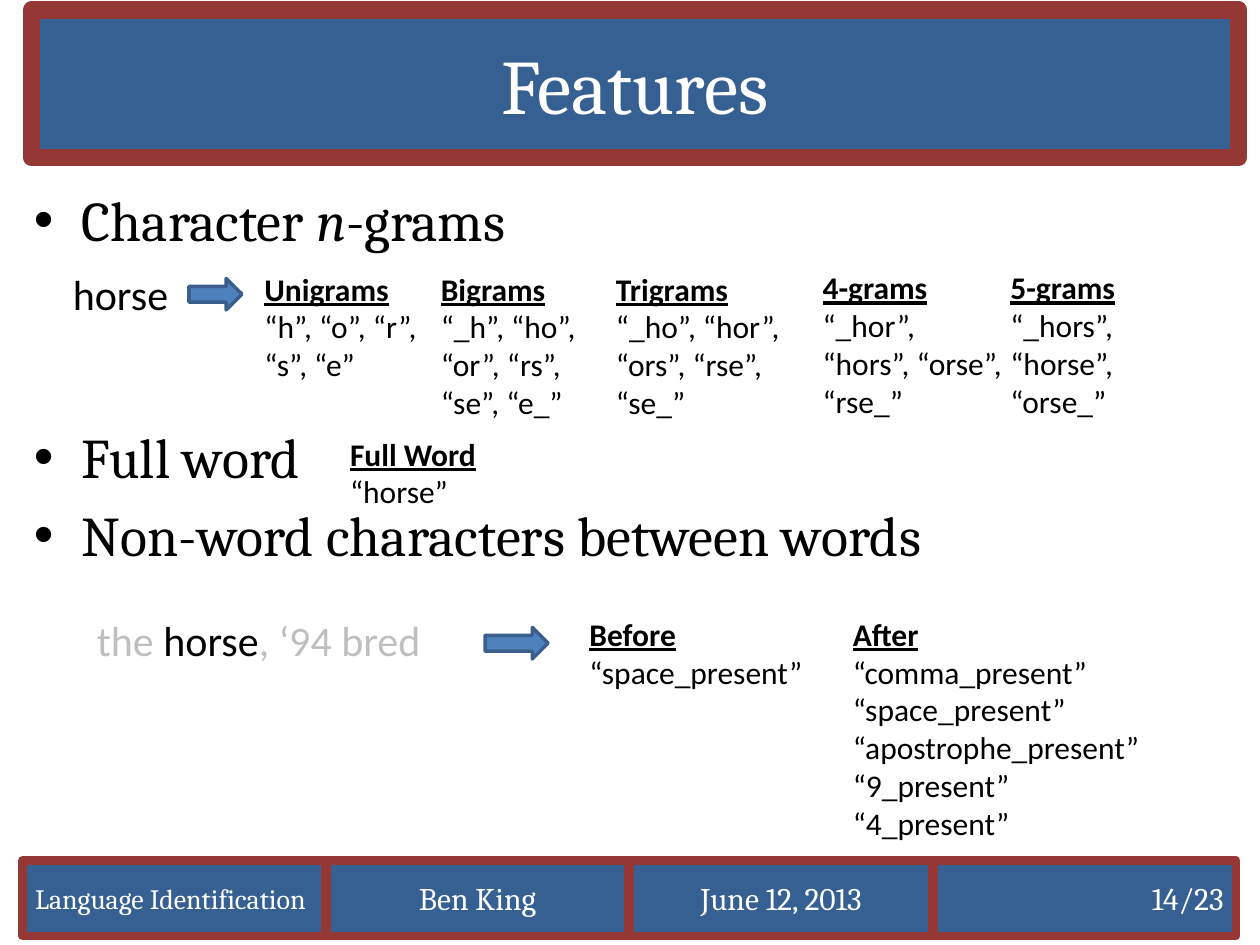
from pptx import Presentation
from pptx.dml.color import RGBColor
from pptx.enum.shapes import MSO_SHAPE
from pptx.enum.text import MSO_ANCHOR, PP_ALIGN
from pptx.oxml import parse_xml
from pptx.oxml.ns import nsdecls
from pptx.util import Inches, Pt

RECT, ARROW = MSO_SHAPE.RECTANGLE, MSO_SHAPE.RIGHT_ARROW
MIDDLE = MSO_ANCHOR.MIDDLE
LEFT, CENTER, RIGHT = PP_ALIGN.LEFT, PP_ALIGN.CENTER, PP_ALIGN.RIGHT

NAVY = RGBColor(0x37, 0x60, 0x92)
RED = RGBColor(0x95, 0x37, 0x35)
BLUE = RGBColor(0x4F, 0x81, 0xBD)
EDGE = RGBColor(0x3A, 0x5F, 0x8C)
GRAY = RGBColor(0xBF, 0xBF, 0xBF)
BLACK = RGBColor(0, 0, 0)
WHITE = RGBColor(255, 255, 255)
SERIF, SANS = "Cambria", "Calibri"

# Left, top, width, heading and lines of each feature list
LISTS = [
    (2, 2.09, 1.42, "Unigrams", ["“h”, “o”, “r”, “s”, “e”"]),
    (3.4, 2.09, 1.42, "Bigrams", ["“_h”, “ho”, “or”, “rs”, “se”, “e_”"]),
    (4.79, 2.09, 1.62, "Trigrams", ["“_ho”, “hor”, “ors”, “rse”, “se_”"]),
    (6.43, 2.08, 1.62, "4-grams", ["“_hor”, “hors”, “orse”, “rse_”"]),
    (7.92, 2.08, 1.62, "5-grams", ["“_hors”, “horse”, “orse_”"]),
    (2.68, 3.4, 1.42, "Full Word", ["“horse”"]),
    (4.58, 4.83, 1.92, "Before", ["“space_present”"]),
    (6.67, 4.83, 2.5, "After",
     ["“comma_present”", "“space_present”", "“apostrophe_present”",
      "“9_present”", "“4_present”"]),
]

# Text, size and alignment of each footer cell
FOOTER = [
    ("Language Identification", 16, LEFT),
    ("Ben King", 18, CENTER),
    ("June 12, 2013", 18, CENTER),
    ("14/23", 18, RIGHT),
]


def style(run, face, size, color):
    run.font.name = face
    run.font.size = Pt(size)
    run.font.color.rgb = color


def paint(shape, fill, line, width):
    shape.fill.solid()
    shape.fill.fore_color.rgb = fill
    shape.line.color.rgb = line
    shape.line.width = Pt(width)


def add_shape(slide, kind, x, y, w, h, fill, line, width):
    shape = slide.shapes.add_shape(kind, Inches(x), Inches(y), Inches(w), Inches(h))
    shape.shadow.inherit = False
    paint(shape, fill, line, width)
    return shape


def label(shape, text, size, align):
    """White serif text in the middle of a panel."""
    frame = shape.text_frame
    frame.text = text
    frame.vertical_anchor = MIDDLE
    para = frame.paragraphs[0]
    para.alignment = align
    style(para.runs[0], SERIF, size, WHITE)


def add_box(slide, x, y, w, h):
    box = slide.shapes.add_textbox(Inches(x), Inches(y), Inches(w), Inches(h))
    box.text_frame.word_wrap = True
    return box.text_frame


def add_runs(para, parts, face, size):
    """Add (text, color) parts to one paragraph."""
    for text, color in parts:
        run = para.add_run()
        run.text = text
        style(run, face, size, color)


def add_list(slide, x, y, w, head, lines):
    frame = add_box(slide, x, y, w, 0.4 + 0.3 * len(lines))
    frame.text = "\n".join([head] + lines)
    for para in frame.paragraphs:
        style(para.runs[0], SANS, 18, BLACK)
    font = frame.paragraphs[0].runs[0].font
    font.bold = font.underline = True


def add_bullet(para, parts, gap):
    add_runs(para, [(text, BLACK) for text in parts], SERIF, 32)
    para.space_before = Pt(gap)
    props = para._p.get_or_add_pPr()
    props.set("marL", str(Inches(0.38)))
    props.set("indent", str(Inches(-0.38)))
    props.append(parse_xml('<a:buFont %s typeface="Arial"/>' % nsdecls("a")))
    props.append(parse_xml('<a:buChar %s char="•"/>' % nsdecls("a")))


def add_title(slide):
    title = slide.shapes.title
    title.left, title.top = Inches(0.25), Inches(0.08)
    title.width, title.height = Inches(9.58), Inches(1.17)
    paint(title, NAVY, RED, 10)
    label(title, "Features", 44, CENTER)


def add_topics(slide):
    frame = add_box(slide, 0.17, 1.42, 9.67, 5.28)
    first = frame.paragraphs[0]
    add_bullet(first, ["Character ", "n", "-grams"], 6.4)
    first.runs[1].font.italic = True
    # The wide gap leaves room for the n-gram lists
    add_bullet(frame.add_paragraph(), ["Full word"], 97)
    add_bullet(frame.add_paragraph(), ["Non-word characters between words"], 6.4)


def add_footer(slide):
    for i, (text, size, align) in enumerate(FOOTER):
        cell = add_shape(slide, RECT, 0.18 + 2.41 * i, 6.83, 2.4, 0.6, NAVY, RED, 5)
        label(cell, text, size, align)


def main():
    deck = Presentation()
    deck.slide_width, deck.slide_height = Inches(10), Inches(7.5)
    slide = deck.slides.add_slide(deck.slide_layouts[5])

    add_footer(slide)
    add_title(slide)
    add_topics(slide)

    # Sample words with arrows to their features
    word = add_box(slide, 0.48, 2.08, 1, 0.5)
    add_runs(word.paragraphs[0], [("horse", BLACK)], SANS, 24)
    add_shape(slide, ARROW, 1.5, 2.21, 0.42, 0.25, BLUE, EDGE, 2)
    phrase = add_box(slide, 0.67, 4.83, 3.79, 0.5)
    parts = [("the ", GRAY), ("horse", BLACK), (", ‘94 bred", GRAY)]
    add_runs(phrase.paragraphs[0], parts, SANS, 24)
    add_shape(slide, ARROW, 3.85, 4.98, 0.5, 0.25, BLUE, EDGE, 2)

    for item in LISTS:
        add_list(slide, *item)

    deck.save("out.pptx")


if __name__ == "__main__":
    main()
